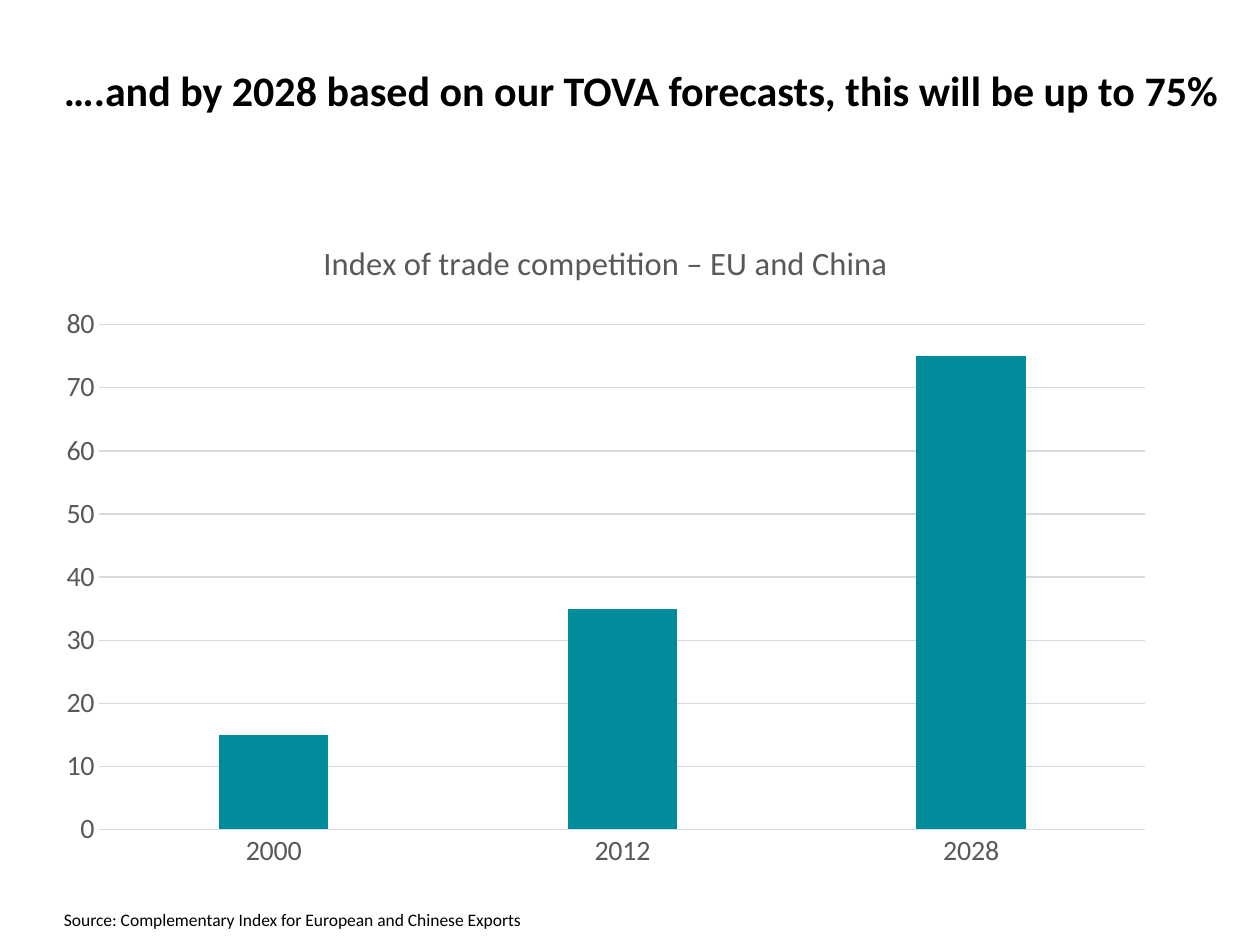
from dataclasses import dataclass

from pptx import Presentation
from pptx.chart.data import CategoryChartData
from pptx.dml.color import RGBColor
from pptx.enum.chart import XL_CHART_TYPE as ChartType, XL_TICK_MARK as TickMark
from pptx.util import Emu, Pt

PX = 914400 / 126
FONT = "Calibri"
BLACK = RGBColor(0x00, 0x00, 0x00)
GREY = RGBColor(0x59, 0x59, 0x59)
LIGHT_GREY = RGBColor(0xD9, 0xD9, 0xD9)
TEAL = RGBColor(0x00, 0x8C, 0x9B)


@dataclass(frozen=True)
class Label:
    text: str
    box: tuple[int, int, int, int]
    size: int
    bold: bool = False
    wrap: bool = True


LABELS = [
    Label("….and by 2028 based on our TOVA forecasts, this will be up to 75%",
          (64, 65, 1160, 60), 24, bold=True),
    Label("Source: Complementary Index for European and Chinese Exports",
          (64, 909, 556, 36), 10, wrap=False),
]
CHART_BOX = (44, 214, 1124, 668)
CHART_TITLE = "Index of trade competition – EU and China"
INDEX_BY_YEAR = {"2000": 15, "2012": 35, "2028": 75}


def px(*lengths: int) -> list[Emu]:
    return [Emu(round(n * PX)) for n in lengths]


def style_font(font, size: float, color: RGBColor, bold: bool = False) -> None:
    font.name = FONT
    font.size = Pt(size)
    font.bold = bold
    font.color.rgb = color


def style_line(line) -> None:
    line.color.rgb = LIGHT_GREY
    line.width = Pt(0.75)


def add_label(s, label: Label) -> None:
    tf = s.shapes.add_textbox(*px(*label.box)).text_frame
    tf.word_wrap = label.wrap
    tf.margin_left = tf.margin_top = tf.margin_right = tf.margin_bottom = 0
    r = tf.paragraphs[0].add_run()
    r.text = label.text
    style_font(r.font, label.size, BLACK, label.bold)


def add_index_chart(s) -> None:
    data = CategoryChartData()
    data.categories = list(INDEX_BY_YEAR)
    data.add_series("Series 1", list(INDEX_BY_YEAR.values()))
    chart = s.shapes.add_chart(
        ChartType.COLUMN_CLUSTERED, *px(*CHART_BOX), data).chart
    style_font(chart.font, 10, BLACK)
    chart.has_legend = False

    chart.has_title = True
    r = chart.chart_title.text_frame.paragraphs[0].add_run()
    r.text = CHART_TITLE
    style_font(r.font, 18.6, GREY)
    chart.chart_title.include_in_layout = False

    years, values = chart.category_axis, chart.value_axis
    for axis in (years, values):
        axis.major_tick_mark = axis.minor_tick_mark = TickMark.NONE
        style_font(axis.tick_labels.font, 16, GREY)
    style_line(years.format.line)
    values.format.line.fill.background()
    style_line(values.major_gridlines.format.line)
    values.minimum_scale, values.maximum_scale, values.major_unit = 0, 80, 10

    plot = chart.plots[0]
    plot.gap_width, plot.overlap = 219, -27
    plot.vary_by_categories = False
    fill = plot.series[0].format.fill
    fill.solid()
    fill.fore_color.rgb = TEAL


def main() -> None:
    prs = Presentation()
    prs.slide_width, prs.slide_height = px(1260, 945)
    s = prs.slides.add_slide(prs.slide_layouts[6])
    add_index_chart(s)
    for label in LABELS:
        add_label(s, label)
    prs.save("out.pptx")


if __name__ == "__main__":
    main()
